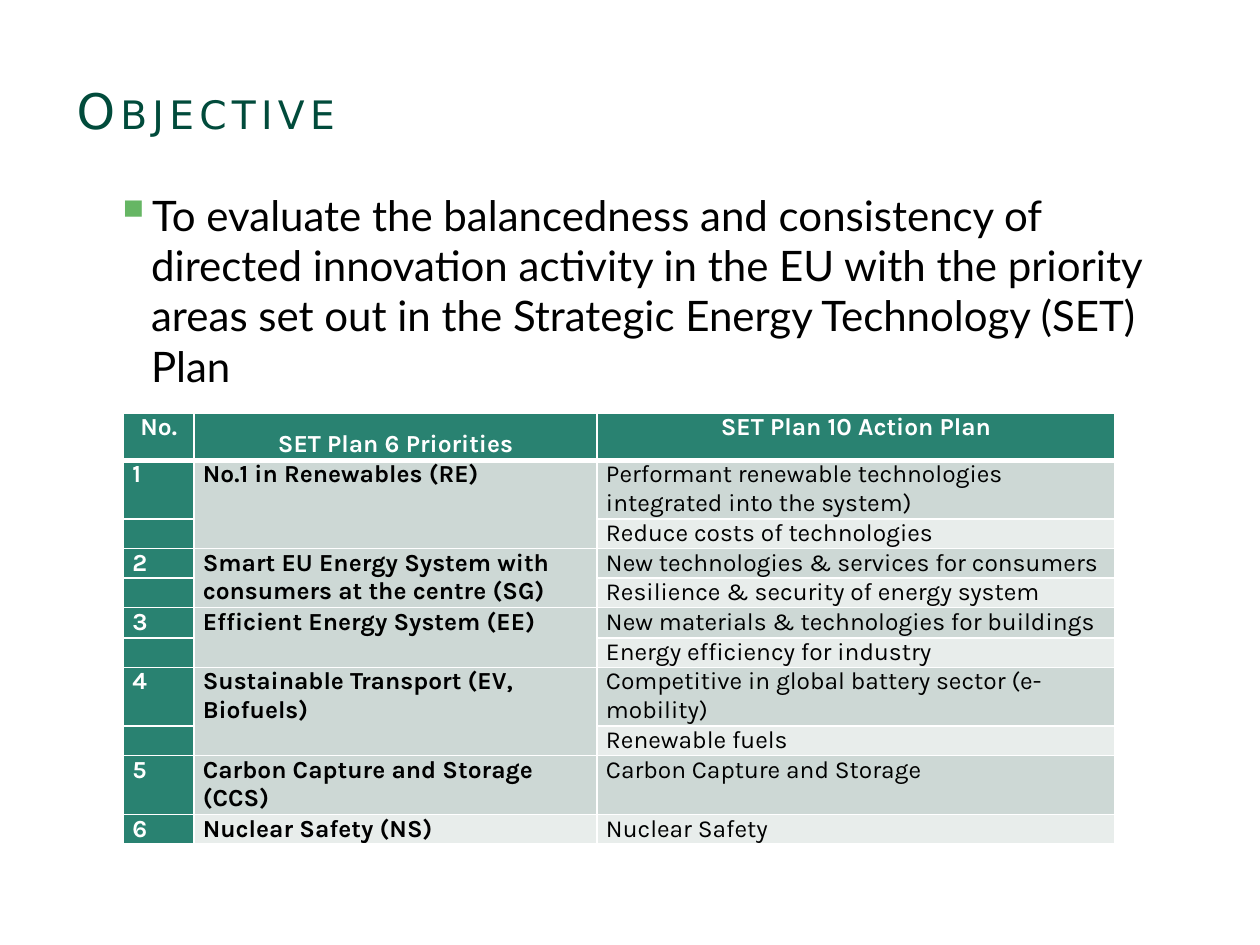
from lxml.etree import SubElement
from pptx import Presentation
from pptx.dml.color import RGBColor
from pptx.enum.text import MSO_ANCHOR, PP_ALIGN
from pptx.oxml import parse_xml
from pptx.oxml.ns import nsdecls, qn
from pptx.util import Inches, Pt

COLORS = {
    "title": "014B3B",
    "bullet": "66B664",
    "text": "000000",
    "white": "FFFFFF",
    "header": "298271",
    "band_dark": "CDD8D5",
    "band_light": "E8EDEB",
}
COL_WIDTHS = [0.56, 3.2, 4.11]
ROW_HEIGHTS = [0.31, 0.43, 0.22, 0.22, 0.22, 0.24, 0.23, 0.22, 0.22, 0.22, 0.22]
HEADERS = ["No.", "SET Plan 6 Priorities", "SET Plan 10 Action Plan"]
PRIORITIES = [
    ("No.1 in Renewables (RE)",
     ["Performant renewable technologies integrated into the system)",
      "Reduce costs of technologies"]),
    ("Smart EU Energy System with consumers at the centre (SG)",
     ["New technologies & services for consumers",
      "Resilience & security of energy system"]),
    ("Efficient Energy System (EE)",
     ["New materials & technologies for buildings",
      "Energy efficiency for industry"]),
    ("Sustainable Transport (EV, Biofuels)",
     ["Competitive in global battery sector (e-mobility)",
      "Renewable fuels"]),
    ("Carbon Capture and Storage (CCS)", ["Carbon Capture and Storage"]),
    ("Nuclear Safety (NS)", ["Nuclear Safety"]),
]


def rgb(name):
    return RGBColor.from_string(COLORS[name])


def add_run(p, text, font, size, color, bold=False):
    r = p.add_run()
    r.text = text
    r.font.name = font
    r.font.size = Pt(size)
    r.font.bold = bold
    r.font.color.rgb = rgb(color)
    return r


def add_title(s, left, top, width, height):
    tf = s.shapes.add_textbox(left, top, width, height).text_frame
    tf.word_wrap = True
    tf.vertical_anchor = MSO_ANCHOR.MIDDLE
    r = add_run(tf.paragraphs[0], "Objective", "DejaVu Sans", 28, "title")
    rpr = r.font._element
    rpr.set("cap", "small")
    rpr.set("spc", "300")


def add_body(s, left, top, width, height):
    tf = s.shapes.add_textbox(left, top, width, height).text_frame
    tf.word_wrap = True
    tf.margin_left = tf.margin_right = tf.margin_top = tf.margin_bottom = 0
    p = tf.paragraphs[0]
    p.space_after = Pt(5.5)
    ppr = p._p.get_or_add_pPr()
    ppr.set("marL", str(Inches(0.69)))
    ppr.set("indent", str(Inches(-0.29)))
    color = SubElement(ppr, qn("a:buClr"))
    SubElement(color, qn("a:srgbClr"), val=COLORS["bullet"])
    SubElement(ppr, qn("a:buSzPct"), val="120000")
    SubElement(ppr, qn("a:buChar"), char="▪")
    add_run(p, "To evaluate the balancedness and consistency of directed "
               "innovation activity in the EU with the priority areas set out "
               "in the Strategic Energy Technology (SET) Plan",
            "Lato", 24, "text")


def style_cell(cell, fill, top=1, bottom=1):
    cell.margin_left = cell.margin_right = Inches(0.07)
    cell.margin_top = cell.margin_bottom = 0
    cell.fill.solid()
    cell.fill.fore_color.rgb = rgb(fill)
    tcpr = cell._tc.get_or_add_tcPr()
    widths = {"lnL": 1, "lnR": 1, "lnT": top, "lnB": bottom}
    for i, (side, width) in enumerate(widths.items()):
        tcpr.insert(i, parse_xml(
            f'<a:{side} {nsdecls("a")} w="{Pt(width)}"><a:solidFill>'
            f'<a:srgbClr val="{COLORS["white"]}"/></a:solidFill></a:{side}>'))
    SubElement(cell.text_frame.paragraphs[0]._p, qn("a:endParaRPr"), sz="1400")


def write_cell(cell, text, color, bold=True, align=PP_ALIGN.LEFT):
    p = cell.text_frame.paragraphs[0]
    p.alignment = align
    add_run(p, text, "Karla", 14, color, bold)
    return p


def add_priorities_table(s, left, top, width, height):
    table = s.shapes.add_table(len(ROW_HEIGHTS), len(COL_WIDTHS),
                               left, top, width, height).table
    for column, w in zip(table.columns, COL_WIDTHS):
        column.width = Inches(w)
    for row, h in zip(table.rows, ROW_HEIGHTS):
        row.height = Inches(h)

    for col, text in enumerate(HEADERS):
        cell = table.cell(0, col)
        style_cell(cell, "header", bottom=3)
        p = write_cell(cell, text, "white", align=PP_ALIGN.CENTER)
        if col == 1:
            p.line_spacing = 1.6

    row = 1
    for number, (priority, actions) in enumerate(PRIORITIES, 1):
        first = row
        for action in actions:
            band = "band_dark" if row % 2 else "band_light"
            edge = 3 if row == 1 else 1
            for col, fill in enumerate(["header", band, band]):
                style_cell(table.cell(row, col), fill, top=edge)
            write_cell(table.cell(row, 2), action, "text", bold=False)
            row += 1
        write_cell(table.cell(first, 0), str(number), "white",
                   align=PP_ALIGN.JUSTIFY)
        write_cell(table.cell(first, 1), priority, "text")
        if len(actions) > 1:
            table.cell(first, 1).merge(table.cell(row - 1, 1))


def main():
    prs = Presentation()
    prs.slide_width, prs.slide_height = Inches(10), Inches(7.5)
    s = prs.slides.add_slide(prs.slide_layouts[6])
    add_body(s, Inches(0.51), Inches(1.5), Inches(8.66), Inches(4.88))
    add_title(s, Inches(0.51), Inches(0.36), Inches(6.86), Inches(1.02))
    add_priorities_table(s, Inches(0.98), Inches(3.28),
                         Inches(sum(COL_WIDTHS)), Inches(sum(ROW_HEIGHTS)))
    prs.save("out.pptx")


if __name__ == "__main__":
    main()
